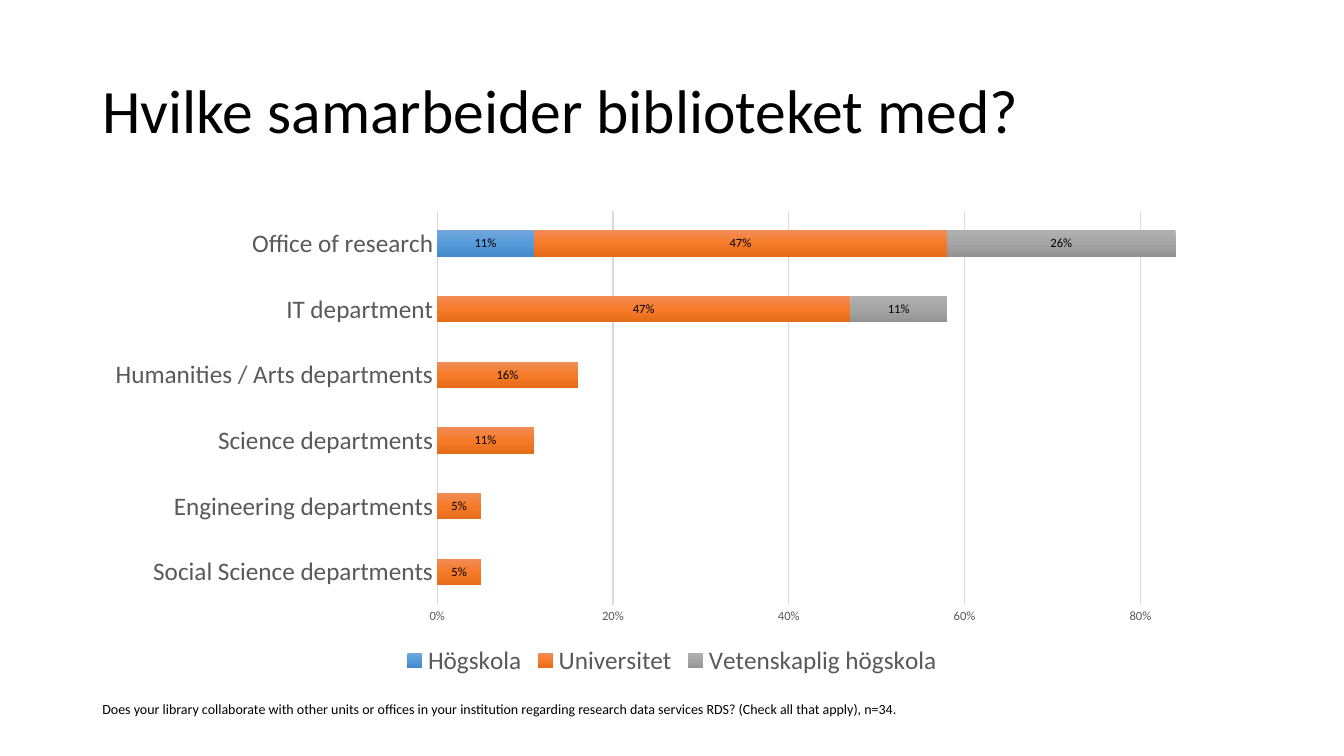
from dataclasses import dataclass

from lxml.etree import SubElement
from pptx import Presentation
from pptx.chart.data import CategoryChartData
from pptx.dml.color import RGBColor
from pptx.enum.chart import XL_CHART_TYPE, XL_LEGEND_POSITION, XL_TICK_MARK
from pptx.enum.text import MSO_ANCHOR, MSO_AUTO_SIZE, PP_ALIGN
from pptx.oxml.ns import qn
from pptx.util import Cm, Pt

FACE = "Calibri"
COLOURS = {"text": "000000", "label": "595959", "line": "D9D9D9"}


@dataclass
class Group:
    name: str
    values: tuple[float | None, ...]
    shades: tuple[str, str, str]  # top, middle, bottom


UNITS = (
    "Social Science departments",
    "Engineering departments",
    "Science departments",
    "Humanities / Arts departments",
    "IT department",
    "Office of research",
)
GROUPS = (
    Group("Högskola", (None, None, None, None, None, 0.11),
          ("71A6DB", "559BDB", "448ACA")),
    Group("Universitet", (0.05, 0.05, 0.11, 0.16, 0.47, 0.47),
          ("F18C57", "F67B28", "E56C19")),
    Group("Vetenskaplig högskola", (None, None, None, None, 0.11, 0.26),
          ("AFAFAF", "A5A5A5", "939393")),
)


def style(font, size: float, colour: str) -> None:
    font.name = FACE
    font.size = Pt(size)
    font.bold = False
    font.color.rgb = RGBColor.from_string(COLOURS[colour])


def rule(line, width: float) -> None:
    line.color.rgb = RGBColor.from_string(COLOURS["line"])
    line.width = Pt(width)


def write(para, text: str, size: float) -> None:
    run = para.add_run()
    run.text = text
    style(run.font, size, "text")


def shade(series, shades: tuple[str, str, str]) -> None:
    """Fill a series from top to bottom with three even stops."""
    fill = series.format.fill
    fill.gradient()
    fill.gradient_angle = 270
    stops = series._element.find(".//" + qn("a:gsLst"))
    for stop in list(stops):
        stops.remove(stop)
    for step, colour in enumerate(shades):
        stop = SubElement(stops, qn("a:gs"), pos=str(step * 50000))
        SubElement(stop, qn("a:srgbClr"), val=colour)


def add_title(slide) -> None:
    title = slide.shapes.title
    title.left, title.top = Cm(2.33), Cm(1.01)
    title.width, title.height = Cm(29.21), Cm(3.68)
    frame = title.text_frame
    frame.auto_size = MSO_AUTO_SIZE.NONE
    frame.vertical_anchor = MSO_ANCHOR.MIDDLE
    para = frame.paragraphs[0]
    para.alignment = PP_ALIGN.LEFT
    para.line_spacing = 0.9
    write(para, "Hvilke samarbeider biblioteket med?", 44)


def add_bars(slide) -> None:
    data = CategoryChartData(number_format="0%")
    data.categories = UNITS
    for group in GROUPS:
        data.add_series(group.name, group.values)
    chart = slide.shapes.add_chart(
        XL_CHART_TYPE.BAR_STACKED, Cm(2.33), Cm(5.07), Cm(29.21), Cm(12.09), data
    ).chart
    style(chart.font, 10, "text")
    chart.has_title = False

    # Bars and their labels
    plot = chart.plots[0]
    plot.gap_width, plot.overlap = 150, 100
    plot.vary_by_categories = False
    for series, group in zip(plot.series, GROUPS):
        shade(series, group.shades)
        labels = series.data_labels
        labels.show_value = True
        labels.number_format = "0%"
        labels.number_format_is_linked = False
        style(labels.font, 9, "text")

    # Axes
    for axis, size in ((chart.category_axis, 18), (chart.value_axis, 9)):
        axis.major_tick_mark = axis.minor_tick_mark = XL_TICK_MARK.NONE
        style(axis.tick_labels.font, size, "label")
    rule(chart.category_axis.format.line, 1)
    scale = chart.value_axis
    scale.minimum_scale, scale.maximum_scale = 0, 0.9
    scale.major_unit = 0.2
    scale.tick_labels.number_format = "0%"
    scale.tick_labels.number_format_is_linked = False
    scale.format.line.fill.background()
    scale.has_major_gridlines = True
    rule(scale.major_gridlines.format.line, 0.75)

    # Legend
    chart.has_legend = True
    chart.legend.position = XL_LEGEND_POSITION.BOTTOM
    chart.legend.include_in_layout = False
    style(chart.legend.font, 18, "label")


def add_note(slide) -> None:
    box = slide.shapes.add_textbox(Cm(2.33), Cm(17.53), Cm(20.83), Cm(0.69))
    frame = box.text_frame
    frame.word_wrap = False
    frame.auto_size = MSO_AUTO_SIZE.SHAPE_TO_FIT_TEXT
    write(frame.paragraphs[0],
          "Does your library collaborate with other units or offices in your "
          "institution regarding research data services RDS? "
          "(Check all that apply), n=34.", 10)


def main() -> None:
    deck = Presentation()
    deck.slide_width, deck.slide_height = Cm(33.87), Cm(19.05)
    slide = deck.slides.add_slide(deck.slide_layouts[5])
    add_title(slide)
    add_bars(slide)
    add_note(slide)
    deck.save("out.pptx")


if __name__ == "__main__":
    main()
